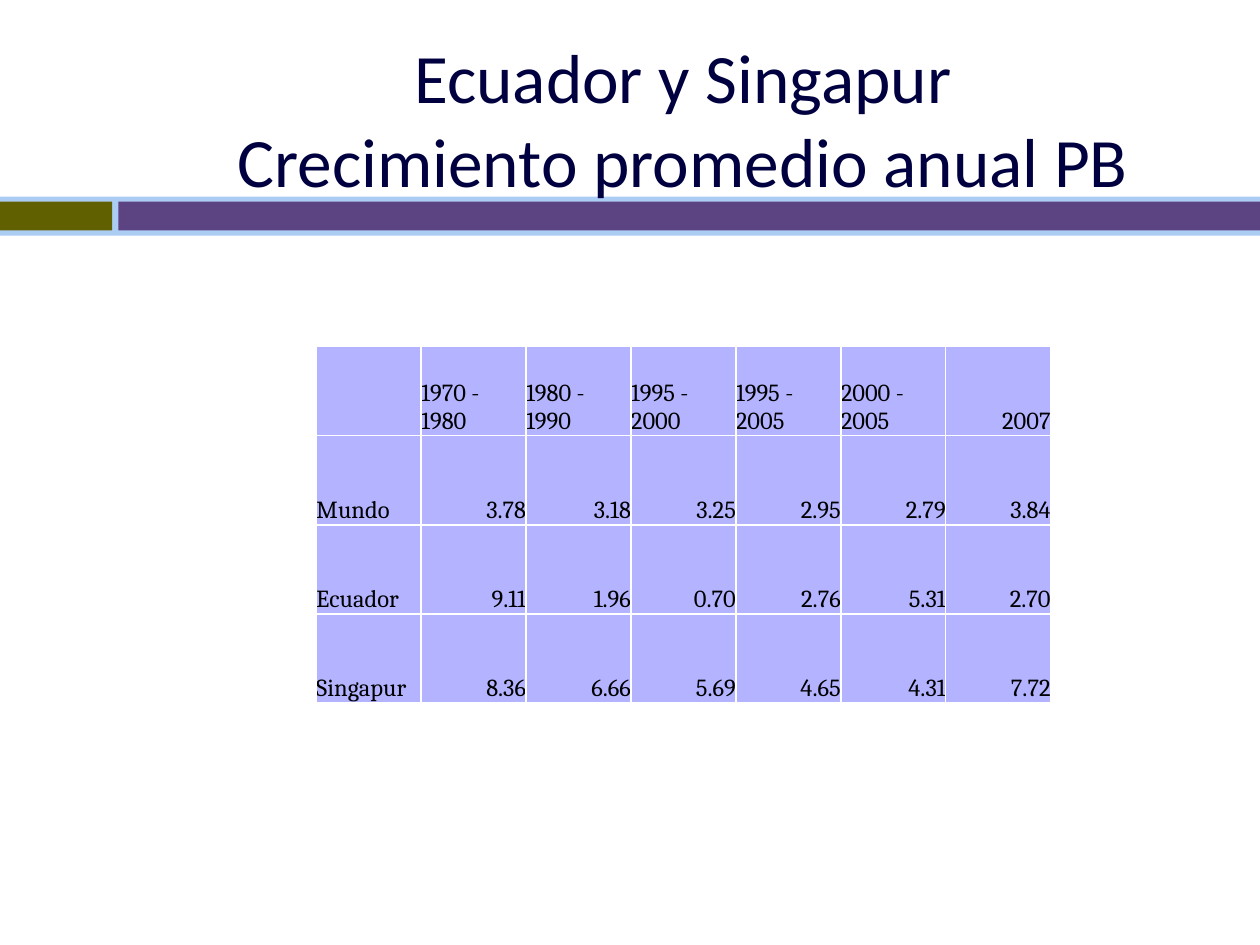
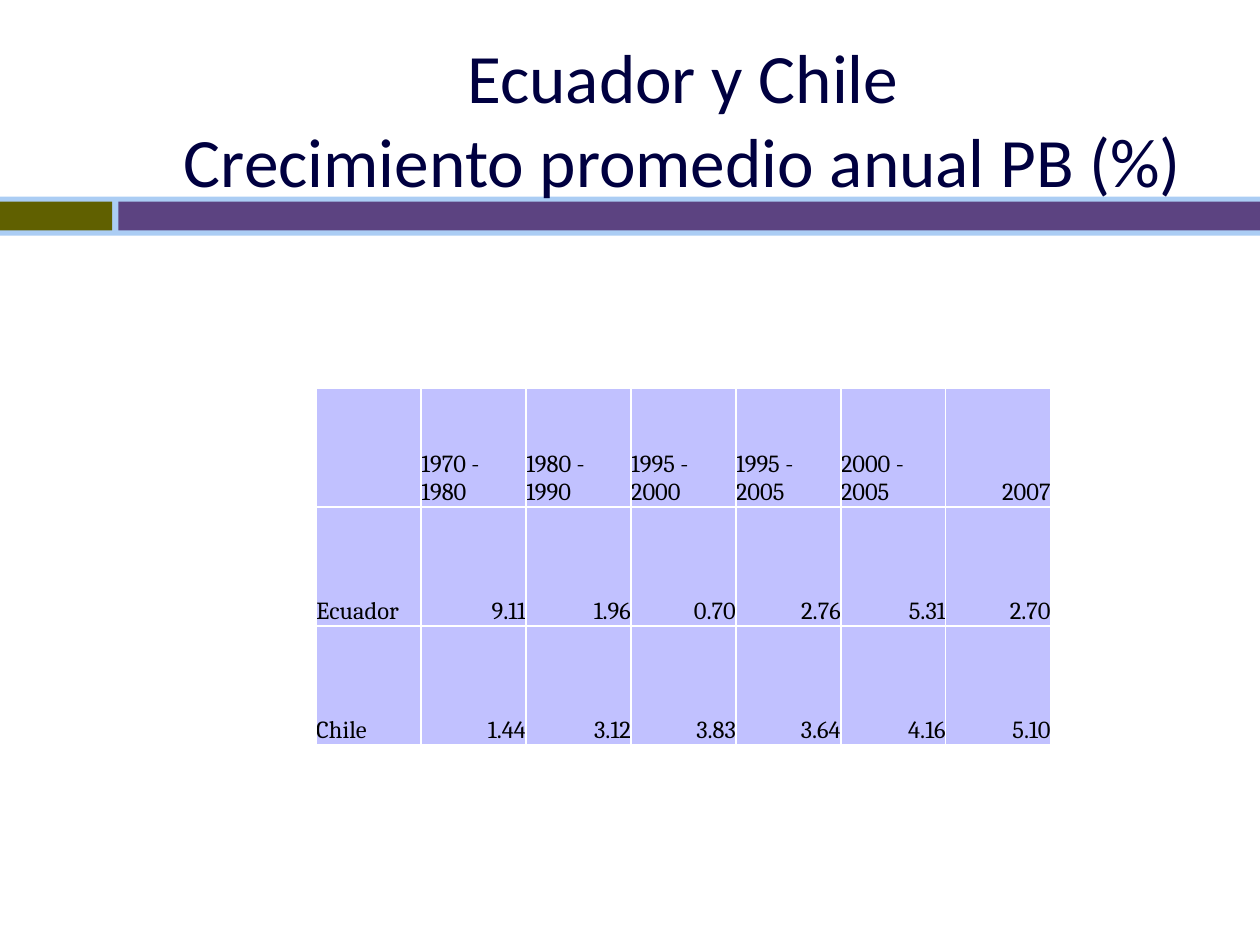
from dataclasses import dataclass

from lxml import etree
from pptx import Presentation
from pptx.dml.color import RGBColor
from pptx.enum.shapes import MSO_SHAPE
from pptx.enum.text import MSO_ANCHOR, MSO_AUTO_SIZE, PP_ALIGN
from pptx.oxml.ns import qn
from pptx.util import Inches, Pt

RECT = MSO_SHAPE.RECTANGLE
MIDDLE, BOTTOM = MSO_ANCHOR.MIDDLE, MSO_ANCHOR.BOTTOM
LEFT, CENTER, RIGHT = PP_ALIGN.LEFT, PP_ALIGN.CENTER, PP_ALIGN.RIGHT
FIXED = MSO_AUTO_SIZE.NONE


@dataclass(frozen=True)
class Theme:
    pale: str = "ABCDF4"
    olive: str = "606000"
    purple: str = "5C4381"
    ink: str = "000000"
    rule: str = "FFFFFF"
    fade: tuple = ((0, "000000"), (20, "000040"), (50, "400040"),
                   (75, "8F0040"), (90, "F27300"), (100, "FFBF00"))
    head: str = "Calibri"
    body: str = "Cambria"
    big: float = 39.6
    small: float = 14
    thin: float = 1


@dataclass(frozen=True)
class Band:
    left: float
    top: float
    width: float
    height: float
    fill: str


@dataclass(frozen=True)
class Page:
    title: tuple
    top: float
    fill: str
    rows: tuple


THEME = Theme()
BANDS = (
    Band(0, 1.56, 10, 0.31, THEME.pale),
    Band(0, 1.6, 0.89, 0.23, THEME.olive),
    Band(0.94, 1.6, 9.06, 0.23, THEME.purple),
)
YEARS = ("", "1970 - 1980", "1980 - 1990", "1995 - 2000",
         "1995 - 2005", "2000 - 2005", "2007")
ECUADOR = ("Ecuador", "9.11", "1.96", "0.70", "2.76", "5.31", "2.70")
PAGES = (
    Page(("Ecuador y Singapur", "Crecimiento promedio anual PB"), 2.75, "B3B3FF", (
        YEARS,
        ("Mundo", "3.78", "3.18", "3.25", "2.95", "2.79", "3.84"),
        ECUADOR,
        ("Singapur", "8.36", "6.66", "5.69", "4.65", "4.31", "7.72"),
    )),
    Page(("Ecuador y Chile", "Crecimiento promedio anual PB (%)"), 3.08, "C1C1FF", (
        YEARS,
        ECUADOR,
        ("Chile", "1.44", "3.12", "3.83", "3.64", "4.16", "5.10"),
    )),
)


def paint(target, color: str) -> None:
    target.fill.solid()
    target.fill.fore_color.rgb = RGBColor.from_string(color)


def add_solid(parent, color: str) -> None:
    solid = etree.SubElement(parent, qn("a:solidFill"))
    etree.SubElement(solid, qn("a:srgbClr"), val=color)


def set_layout(slide) -> None:
    layout = slide.slide_layout
    title = layout.placeholders[0]
    title.left, title.top = Inches(0.92), Inches(0.31)
    title.width, title.height = Inches(9), Inches(1.25)
    tree = layout.shapes.element
    for i, band in enumerate(BANDS):
        shape = slide.shapes.add_shape(
            RECT, Inches(band.left), Inches(band.top),
            Inches(band.width), Inches(band.height))
        shape.shadow.inherit = False
        paint(shape, band.fill)
        shape.line.fill.background()
        shape.name = f"Band {i + 1}"
        shape.element.nvSpPr.cNvPr.set("id", str(20 + i))
        tree.insert(2 + i, shape.element)


def fade_text(run) -> None:
    grad = etree.Element(qn("a:gradFill"))
    stops = etree.SubElement(grad, qn("a:gsLst"))
    for place, color in THEME.fade:
        stop = etree.SubElement(stops, qn("a:gs"), pos=str(place * 1000))
        etree.SubElement(stop, qn("a:srgbClr"), val=color)
    etree.SubElement(grad, qn("a:lin"), ang="5400000", scaled="0")
    run.font.fill.background()
    props = run.font._element if hasattr(run.font, "_element") else run._r.get_or_add_rPr()
    props.replace(props.find(qn("a:noFill")), grad)


def add_title(slide, lines: tuple) -> None:
    frame = slide.shapes.title.text_frame
    frame.auto_size = FIXED
    frame.vertical_anchor = MIDDLE
    para = frame.paragraphs[0]
    para.alignment = CENTER
    for i, line in enumerate(lines):
        if i:
            para.add_line_break()
        run = para.add_run()
        run.text = line
        run.font.name = THEME.head
        run.font.size = Pt(THEME.big)
        fade_text(run)


def add_rules(cell) -> None:
    props = cell._tc.get_or_add_tcPr()
    for i, side in enumerate(("lnL", "lnR", "lnT", "lnB")):
        line = etree.Element(qn(f"a:{side}"), w=str(Pt(THEME.thin)))
        add_solid(line, THEME.rule)
        props.insert(i, line)


def fill_cell(cell, text: str, align, color: str) -> None:
    paint(cell, color)
    add_rules(cell)
    cell.vertical_anchor = BOTTOM
    cell.margin_left = cell.margin_right = 0
    cell.margin_top = cell.margin_bottom = 0
    if not text:
        return
    para = cell.text_frame.paragraphs[0]
    para.alignment = align
    run = para.add_run()
    run.text = text
    run.font.name = THEME.body
    run.font.size = Pt(THEME.small)
    run.font.color.rgb = RGBColor.from_string(THEME.ink)


def add_grid(slide, page: Page) -> None:
    grid = slide.shapes.add_table(
        len(page.rows), len(YEARS), Inches(2.51), Inches(page.top),
        Inches(5.83), Inches(2.83)).table
    grid.horz_banding = False
    for r, row in enumerate(page.rows):
        for c, text in enumerate(row):
            span = c == 0 or " - " in text
            fill_cell(grid.cell(r, c), text, LEFT if span else RIGHT, page.fill)


def main() -> None:
    deck = Presentation()
    deck.slide_width, deck.slide_height = Inches(10), Inches(7.5)
    layout = deck.slide_layouts[5]
    for i, page in enumerate(PAGES):
        slide = deck.slides.add_slide(layout)
        if i == 0:
            set_layout(slide)
        add_title(slide, page.title)
        add_grid(slide, page)
    deck.save("out.pptx")


if __name__ == "__main__":
    main()
